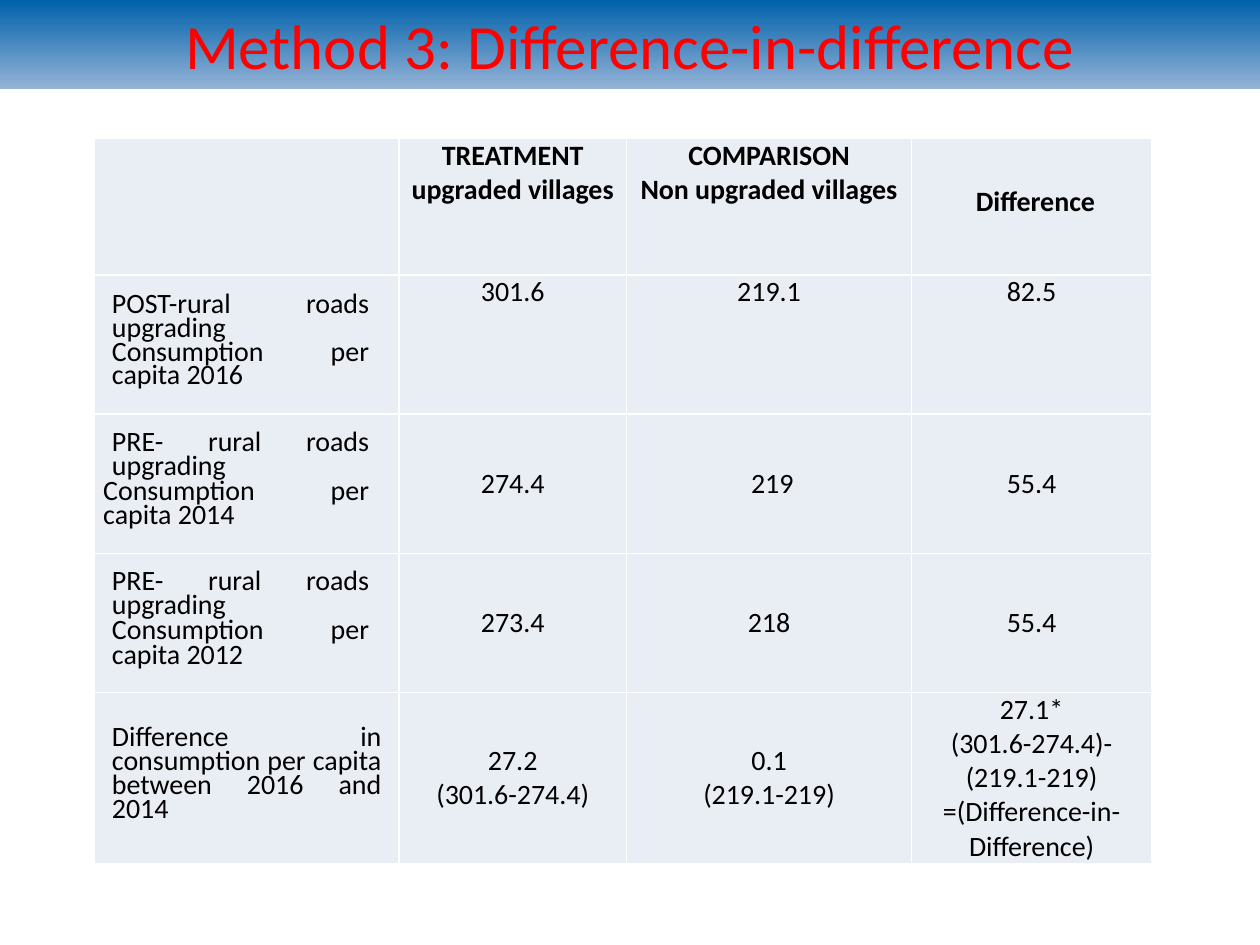
"""Build the difference-in-difference slide with its results table."""
from lxml import etree
from pptx import Presentation
from pptx import util as u
from pptx.dml.color import RGBColor
from pptx.enum import shapes, text
from pptx.oxml import ns

BLACK = RGBColor(0x00, 0x00, 0x00)
WHITE = RGBColor(0xFF, 0xFF, 0xFF)
RED = RGBColor(0xFF, 0x00, 0x00)
DEEP_BLUE = RGBColor(0x00, 0x61, 0xAA)
SOFT_BLUE = RGBColor(0x95, 0xB3, 0xD7)
CELL_FILL = RGBColor(0xE9, 0xED, 0xF4)

CENTER = text.PP_ALIGN.CENTER
JUSTIFY = text.PP_ALIGN.JUSTIFY
TOP = text.MSO_ANCHOR.TOP
MIDDLE = text.MSO_ANCHOR.MIDDLE

COLUMN_WIDTHS = [174, 130, 163, 137]
ROW_HEIGHTS = [78, 79.5, 79.5, 79.5, 97.5]

HEADERS = [
    [],
    ["TREATMENT", "upgraded villages"],
    ["COMPARISON", "Non upgraded villages"],
    ["Difference"],
]
ROW_LABELS = [
    [("POST-rural roads upgrading", 5, 13.7), ("Consumption per capita 2016", 5, 13.7)],
    [("PRE- rural roads upgrading", 5, 13.7), ("Consumption per capita 2014", 0, 14.2)],
    [("PRE- rural roads upgrading", 5, 13.7), ("Consumption per capita 2012", 5, 14.2)],
    [("Difference in consumption per capita between 2016 and 2014", 5, 13.7)],
]
VALUES = [
    [["301.6"], ["219.1"], ["82.5"]],
    [["274.4"], [" 219"], ["55.4"]],
    [["273.4"], ["218"], ["55.4"]],
    [
        ["27.2", "(301.6-274.4)"],
        ["0.1", "(219.1-219)"],
        ["27.1*", "(301.6-274.4)-(219.1-219) =(Difference-in-Difference)"],
    ],
]


class SlideBuilder:
    """Hold the text style and the slide being built."""

    def __init__(self, slide, font="Calibri", size=16):
        self.slide = slide
        self.font = font
        self.size = size

    def add_run(self, paragraph, words, size, color, bold=False):
        run = paragraph.add_run()
        run.text = words
        run.font.name = self.font
        run.font.size = u.Pt(size)
        run.font.bold = bold
        run.font.color.rgb = color

    def add_title(self, words, width, height):
        shape = self.slide.shapes.add_shape(
            shapes.MSO_SHAPE.RECTANGLE, 0, 0, u.Pt(width), u.Pt(height))
        shape.shadow.inherit = False
        shape.line.fill.background()
        shape.fill.gradient()
        shape.fill.gradient_angle = 270
        for stop, color, position in zip(
                shape.fill.gradient_stops, (DEEP_BLUE, SOFT_BLUE), (0, 1)):
            stop.color.rgb = color
            stop.position = position
        frame = shape.text_frame
        frame.word_wrap = True
        frame.vertical_anchor = MIDDLE
        paragraph = frame.paragraphs[0]
        paragraph.alignment = CENTER
        self.add_run(paragraph, words, 36, RED)

    def add_table(self, left, top, widths, heights):
        table = self.slide.shapes.add_table(
            len(heights), len(widths), u.Pt(left), u.Pt(top),
            u.Pt(sum(widths)), u.Pt(sum(heights))).table
        for column, width in zip(table.columns, widths):
            column.width = u.Pt(width)
        for row, height in zip(table.rows, heights):
            row.height = u.Pt(height)
        for cell in table.iter_cells():
            self.style_cell(cell)
        return table

    def style_cell(self, cell):
        cell.fill.solid()
        cell.fill.fore_color.rgb = CELL_FILL
        cell.margin_left = cell.margin_right = u.Pt(5)
        cell.margin_top = cell.margin_bottom = 0
        properties = cell._tc.get_or_add_tcPr()
        for index, side in enumerate(("lnL", "lnR", "lnT", "lnB")):
            line = etree.Element(ns.qn(f"a:{side}"), w=str(u.Pt(1)))
            fill = etree.SubElement(line, ns.qn("a:solidFill"))
            etree.SubElement(fill, ns.qn("a:srgbClr"), val=str(WHITE))
            properties.insert(index, line)

    def fill_cell(self, cell, lines, alignment=CENTER, anchor=MIDDLE, bold=False):
        cell.vertical_anchor = anchor
        frame = cell.text_frame
        for index, (words, indent, spacing) in enumerate(lines):
            paragraph = frame.add_paragraph() if index else frame.paragraphs[0]
            paragraph.alignment = alignment
            if spacing:
                paragraph.line_spacing = u.Pt(spacing)
            if indent:
                paragraph._p.get_or_add_pPr().set("marL", str(u.Pt(indent)))
            self.add_run(paragraph, words, self.size, BLACK, bold)


def plain(lines):
    return [(words, 0, None) for words in lines]


def main():
    presentation = Presentation()
    presentation.slide_width = u.Pt(720)
    presentation.slide_height = u.Pt(540)
    builder = SlideBuilder(presentation.slides.add_slide(presentation.slide_layouts[6]))
    builder.add_title("Method 3: Difference-in-difference", 720, 51)
    table = builder.add_table(54, 79.2, COLUMN_WIDTHS, ROW_HEIGHTS)

    for column, lines in enumerate(HEADERS[:3]):
        builder.fill_cell(table.cell(0, column), plain(lines), anchor=TOP, bold=True)
    builder.fill_cell(table.cell(0, 3), [(HEADERS[3][0], 4.5, 13.6)], bold=True)

    for row, (label, values) in enumerate(zip(ROW_LABELS, VALUES), start=1):
        label_cell = table.cell(row, 0)
        label_cell.margin_right = u.Pt(10 if row == 4 else 17)
        builder.fill_cell(label_cell, label, alignment=JUSTIFY)
        for column, lines in enumerate(values, start=1):
            builder.fill_cell(table.cell(row, column), plain(lines),
                              anchor=TOP if row == 1 else MIDDLE)

    presentation.save("out.pptx")


if __name__ == "__main__":
    main()
